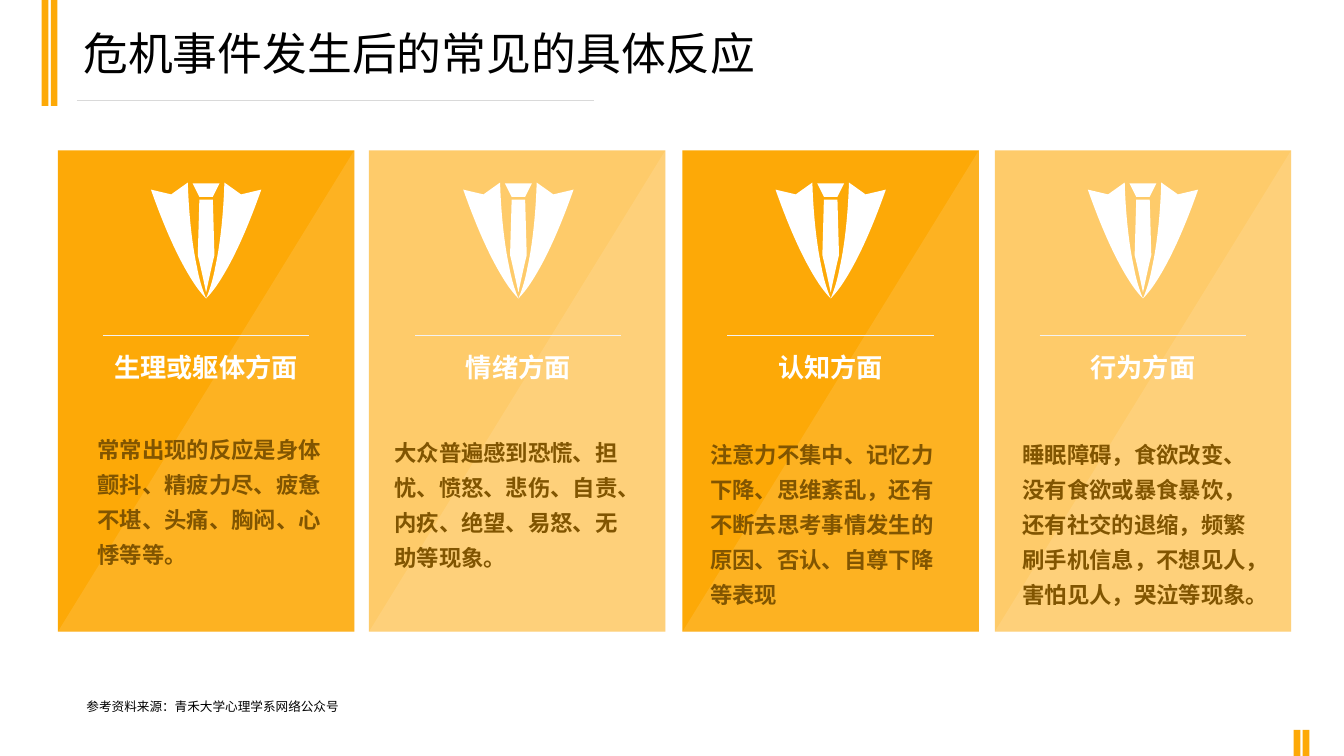
from lxml import etree
from pptx import Presentation, util as u
from pptx.dml.color import RGBColor
from pptx.enum import lang, shapes, text
from pptx.oxml import ns

COLORS = {
    "amber": "FDA907", "sand": "FECB6A", "brown": "815501", "white": "FFFFFF",
    "black": "000000", "gray": "D9D9D9", "pale": "F2F2F2",
}
NOTO = "Noto Sans CJK SC"
PITCH = 7.87
CARDS = [
    ("amber", 0, "生理或躯体方面", (0.75, 6.88, 6.55, 3.68),
     "常常出现的反应是身体颤抖、精疲力尽、疲惫不堪、头痛、胸闷、心悸等等。"),
    ("sand", -0.03, "情绪方面", (0.36, 6.95, 6.55, 3.68),
     "大众普遍感到恐慌、担忧、愤怒、悲伤、自责、内疚、绝望、易怒、无助等现象。"),
    ("amber", 0, "认知方面", (0.45, 6.99, 6.55, 4.6),
     "注意力不集中、记忆力下降、思维紊乱，还有不断去思考事情发生的原因、否认、自尊下降等表现"),
    ("sand", 0, "行为方面", (0.45, 6.99, 6.55, 4.6),
     "睡眠障碍，食欲改变、没有食欲或暴食暴饮，还有社交的退缩，频繁刷手机信息，"
     "不想见人，害怕见人，哭泣等现象。"),
]
KNOT = [(-0.34, 0.02), (0.34, 0.02), (0.17, 0.36), (-0.17, 0.36)]
BLADE = [(-0.21, 1.83), (-0.15, 2.06, 0, 2.77, 0, 2.77),
         (0, 2.77, 0.15, 2.06, 0.21, 1.83), (0.17, 0.43), (-0.17, 0.43)]
LAPEL = [(0.46, 0), (0.88, 0.3), (1.39, 0.18),
         (0.9, 1.57, 0.5, 2.26, 0.25, 2.62), (0.09, 2.84, 0, 2.92, 0, 2.92),
         (0.1, 2.69, 0.18, 2.41, 0.23, 2.13), (0.44, 1.17, 0.46, 0, 0.46, 0)]


def tint(name):
    return RGBColor.from_string(COLORS[name])


def paint(shape, color):
    shape.shadow.inherit = False
    shape.fill.solid()
    shape.fill.fore_color.rgb = tint(color)
    shape.line.fill.background()


def block(slide, box, color, kind=shapes.MSO_SHAPE.RECTANGLE):
    shape = slide.shapes.add_shape(kind, *map(u.Cm, box))
    paint(shape, color)
    return shape


def rule(slide, left, top, width, color):
    line = slide.shapes.add_connector(
        shapes.MSO_CONNECTOR.STRAIGHT,
        u.Cm(left), u.Cm(top), u.Cm(left + width), u.Cm(top))
    line.line.color.rgb = tint(color)
    line.line.width = u.Pt(0.75)
    etree.SubElement(line._element.spPr, ns.qn("a:effectLst"))


def write(slide, box, words, size, color, font=NOTO, bold=False,
          align=text.PP_ALIGN.LEFT, anchor=text.MSO_ANCHOR.TOP, pitch=None):
    frame = slide.shapes.add_textbox(*map(u.Cm, box)).text_frame
    frame.word_wrap = True
    frame.vertical_anchor = anchor
    para = frame.paragraphs[0]
    para.alignment = align
    if pitch:
        para.line_spacing = u.Pt(pitch)
    run = para.add_run()
    run.text = words
    run.font.size = u.Pt(size)
    run.font.bold = bold
    run.font.color.rgb = tint(color)
    run.font.name = font
    run.font.language_id = lang.MSO_LANGUAGE_ID.SIMPLIFIED_CHINESE
    east = etree.SubElement(run.font._element, ns.qn("a:ea"))
    east.set("typeface", font)


def outline(group, mid, top, steps, side):
    dots = [(u.Cm(mid + side * step[i]), u.Cm(top + step[i + 1]))
            for step in steps for i in range(0, len(step), 2)]
    pen = group.shapes.build_freeform(*dots[0])
    pen.add_line_segments(dots[1:], close=True)
    shape = pen.convert_to_shape()
    paint(shape, "white")
    lines = list(shape._element.iter(ns.qn("a:lnTo")))
    for step in steps[1:]:
        used, lines = lines[:len(step) // 2], lines[len(step) // 2:]
        if len(used) == 3:
            curve = etree.Element(ns.qn("a:cubicBezTo"))
            used[0].addprevious(curve)
            for line in used:
                curve.append(line[0])
                line.getparent().remove(line)


def icon(slide, mid, top):
    group = slide.shapes.add_group_shape()
    for steps, side in ((KNOT, 1), (BLADE, 1), (LAPEL, -1), (LAPEL, 1)):
        outline(group, mid, top, steps, side)


def card(slide, box, color, shift, head, inner, body):
    left, top, width, height = box
    panel = (left + shift, top, width, height)
    block(slide, panel, color)
    sheen = block(slide, panel, "white", shapes.MSO_SHAPE.RIGHT_TRIANGLE)
    props = sheen._element.spPr
    props.find(ns.qn("a:xfrm")).set("flipH", "1")
    hue = props.find(ns.qn("a:solidFill"))[0]
    etree.SubElement(hue, ns.qn("a:alpha")).set("val", "11000")
    write(slide, (left + 0.46, top + 4.93, 6.55, 1.07), head, 18.7, "white",
          font="Arial", bold=True, align=text.PP_ALIGN.CENTER,
          anchor=text.MSO_ANCHOR.MIDDLE)
    inset, drop, wide, high = inner
    write(slide, (left + inset, top + drop, wide, high), body, 16, "brown",
          bold=True, pitch=25)
    rule(slide, left + 1.13, top + 4.66, 5.2, "pale")
    icon(slide, left + width / 2, top + 0.81)


def bars(slide, box):
    left, top, width, height = box
    for i in range(2):
        block(slide, (left + i * 0.23, top, width, height), "amber")


def header(slide, box):
    left, top, width, height = box
    bars(slide, (left, top, 0.17, height))
    rule(slide, left + 0.89, top + 2.53, 13.02, "gray")
    write(slide, (left + 0.8, top + 0.5, width, 1.63),
          "危机事件发生后的常见的具体反应", 32, "black",
          font="Roboto Condensed", anchor=text.MSO_ANCHOR.MIDDLE)


def footer(slide, box):
    write(slide, box, "参考资料来源：青禾大学心理学系网络公众号", 9, "black", pitch=14)
    bars(slide, (32.6, 18.39, 0.17, 0.66))


def main():
    deck = Presentation()
    deck.slide_width, deck.slide_height = u.Cm(33.87), u.Cm(19.05)
    slide = deck.slides.add_slide(deck.slide_layouts[6])
    header(slide, (1.05, 0, 22.02, 2.67))
    for i, parts in enumerate(CARDS):
        card(slide, (1.46 + i * PITCH, 3.79, 7.47, 12.13), *parts)
    footer(slide, (1.93, 17.37, 9.68, 0.71))
    deck.save("out.pptx")


if __name__ == "__main__":
    main()
